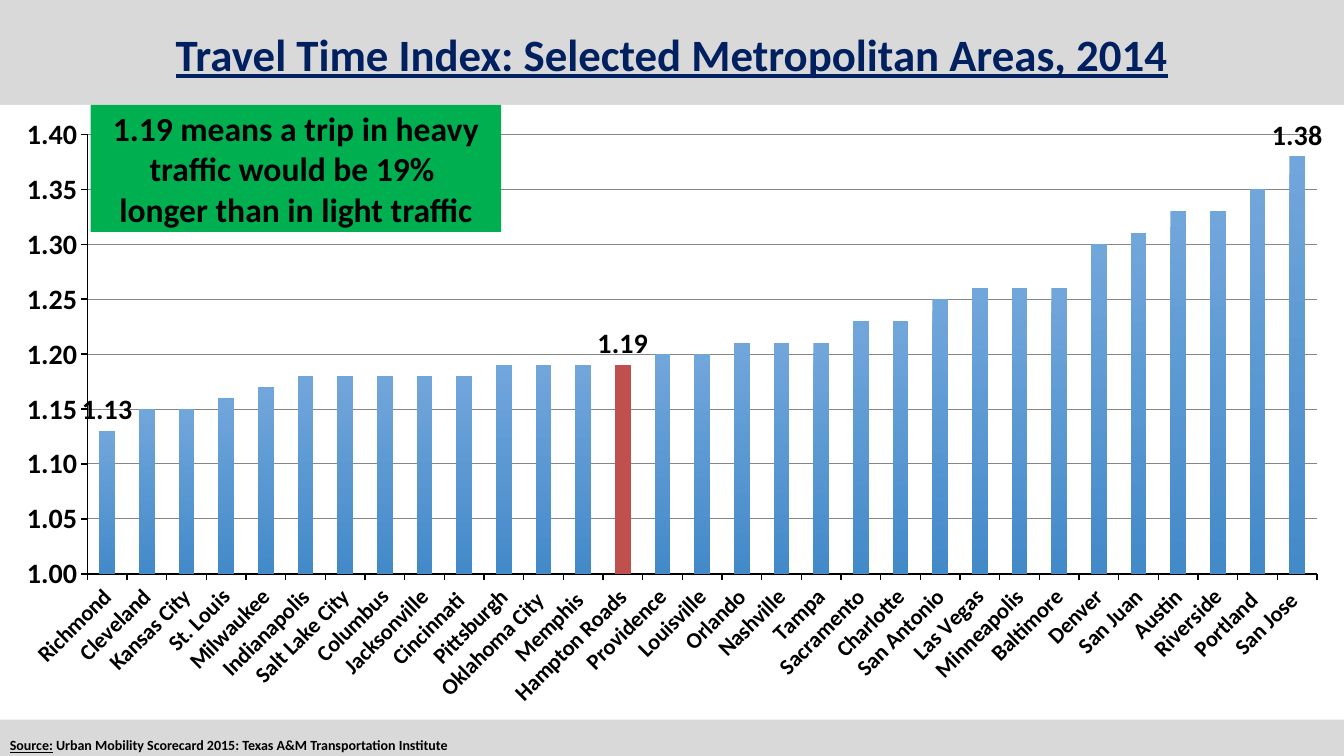
"""Build a slide with a column chart of travel time indexes by metropolitan area."""
from lxml import etree
from pptx import Presentation
from pptx.chart.data import CategoryChartData
from pptx.dml.color import RGBColor
from pptx.enum.chart import XL_CHART_TYPE, XL_LABEL_POSITION, XL_TICK_MARK
from pptx.enum.shapes import MSO_SHAPE
from pptx.enum.text import MSO_ANCHOR, PP_ALIGN
from pptx.oxml import parse_xml
from pptx.oxml.ns import nsdecls, qn
from pptx.util import Inches, Pt

COLUMNS = XL_CHART_TYPE.COLUMN_CLUSTERED
OUTSIDE_END = XL_LABEL_POSITION.OUTSIDE_END
TICK_OUT = XL_TICK_MARK.OUTSIDE
TICK_NONE = XL_TICK_MARK.NONE
RECTANGLE = MSO_SHAPE.RECTANGLE
MIDDLE = MSO_ANCHOR.MIDDLE
CENTER = PP_ALIGN.CENTER

BLACK = RGBColor(0, 0, 0)
NAVY = RGBColor(0x00, 0x20, 0x60)
GREEN = RGBColor(0x00, 0xB0, 0x50)
RED = RGBColor(0xC0, 0x50, 0x4D)
BAR_TOP = RGBColor(0x71, 0xA6, 0xDB)
BAR_BOTTOM = RGBColor(0x43, 0x8A, 0xC9)
GRID_GRAY = RGBColor(0x86, 0x86, 0x86)
PAGE_GRAY = RGBColor(0xD9, 0xD9, 0xD9)

FONT = "Calibri"
HIGHLIGHT = "Hampton Roads"
INDEXES = {
    "Richmond": 1.13, "Cleveland": 1.15, "Kansas City": 1.15, "St. Louis": 1.16,
    "Milwaukee": 1.17, "Indianapolis": 1.18, "Salt Lake City": 1.18,
    "Columbus": 1.18, "Jacksonville": 1.18, "Cincinnati ": 1.18,
    "Pittsburgh": 1.19, "Oklahoma City ": 1.19, "Memphis ": 1.19,
    "Hampton Roads": 1.19, "Providence": 1.2, "Louisville": 1.2,
    "Orlando": 1.21, "Nashville": 1.21, "Tampa": 1.21, "Sacramento": 1.23,
    "Charlotte": 1.23, "San Antonio": 1.25, "Las Vegas": 1.26,
    "Minneapolis": 1.26, "Baltimore": 1.26, "Denver": 1.3, "San Juan": 1.31,
    "Austin": 1.33, "Riverside": 1.33, "Portland ": 1.35, "San Jose ": 1.38,
}
CALLOUT_LINES = (
    "1.19 means a trip in heavy",
    "traffic would be 19% ",
    "longer than in light traffic",
)


def style_font(font, size, color=BLACK):
    """Apply the slide's bold typeface."""
    font.name = FONT
    font.size = Pt(size)
    font.bold = True
    font.color.rgb = color


deck = Presentation()
deck.slide_width = Inches(13.33)
deck.slide_height = Inches(7.5)
page = deck.slides.add_slide(deck.slide_layouts[6])
page.background.fill.solid()
page.background.fill.fore_color.rgb = PAGE_GRAY

cities = list(INDEXES)
chart_data = CategoryChartData(number_format="0.00")
chart_data.categories = cities
chart_data.add_series("Series 1", list(INDEXES.values()))
chart = page.shapes.add_chart(
    COLUMNS, 0, Inches(1.04), deck.slide_width, Inches(6.1), chart_data
).chart
chart.has_legend = False
chart.has_title = False
chart.font.name = FONT
chart.font.size = Pt(10)
chart.font.color.rgb = BLACK

chart_space = chart.element
chart_space.find(qn("c:chart")).addnext(parse_xml(
    f'<c:spPr {nsdecls("c", "a")}><a:solidFill><a:srgbClr val="FFFFFF"/></a:solidFill>'
    '<a:ln><a:noFill/></a:ln></c:spPr>'
))
plot_area = chart_space.find(".//" + qn("c:plotArea"))
for old_layout in plot_area.findall(qn("c:layout")):
    plot_area.remove(old_layout)
layout = etree.Element(qn("c:layout"))
manual = etree.SubElement(layout, qn("c:manualLayout"))
for tag, value in (
    ("layoutTarget", "inner"), ("xMode", "edge"), ("yMode", "edge"),
    ("x", "0.065"), ("y", "0.048"), ("w", "0.915"), ("h", "0.715"),
):
    etree.SubElement(manual, qn("c:" + tag)).set("val", value)
plot_area.insert(0, layout)

city_axis, index_axis = chart.category_axis, chart.value_axis
for axis, size in ((city_axis, 16), (index_axis, 20)):
    style_font(axis.tick_labels.font, size)
    axis.major_tick_mark = TICK_OUT
    axis.minor_tick_mark = TICK_NONE
    axis.format.line.color.rgb = BLACK
    axis.format.line.width = Pt(1)
city_axis._element.find(".//" + qn("a:bodyPr")).set("rot", "-2700000")
index_axis.minimum_scale = 1
index_axis.maximum_scale = 1.4
index_axis.major_unit = 0.05
index_axis.tick_labels.number_format = "0.00"
index_axis.tick_labels.number_format_is_linked = False
index_axis.has_major_gridlines = True
index_axis.major_gridlines.format.line.color.rgb = GRID_GRAY
index_axis.major_gridlines.format.line.width = Pt(0.75)

plot = chart.plots[0]
plot.gap_width = 150
plot.vary_by_categories = False
bars = plot.series[0]
bars.invert_if_negative = False
bar_fill = bars.format.fill
bar_fill.gradient()
bar_fill.gradient_angle = 270
for stop, color in zip(bar_fill.gradient_stops, (BAR_TOP, BAR_BOTTOM)):
    stop.color.rgb = color

highlight_index = cities.index(HIGHLIGHT)
highlight_fill = bars.points[highlight_index].format.fill
highlight_fill.solid()
highlight_fill.fore_color.rgb = RED
bars.data_labels.show_value = False
for index in (0, highlight_index, len(cities) - 1):
    label = bars.points[index].data_label
    style_font(label.font, 20)
    label.position = OUTSIDE_END

title_box = page.shapes.add_textbox(0, 0, deck.slide_width, Inches(1.13))
title_frame = title_box.text_frame
title_frame.word_wrap = True
title_frame.vertical_anchor = MIDDLE
title = title_frame.paragraphs[0]
title.text = "Travel Time Index: Selected Metropolitan Areas, 2014"
title.alignment = CENTER
title.line_spacing = 0.9
style_font(title.font, 32, NAVY)
title.font.underline = True

source_box = page.shapes.add_textbox(0, Inches(7.26), Inches(9.27), Inches(0.27))
source_box.text_frame.word_wrap = True
source = source_box.text_frame.paragraphs[0]
for text, underlined in (
    ("Source:", True),
    (" Urban Mobility Scorecard 2015: Texas A&M Transportation Institute", False),
):
    span = source.add_run()
    span.text = text
    style_font(span.font, 10)
    span.font.underline = underlined

callout = page.shapes.add_shape(
    RECTANGLE, Inches(0.9), Inches(1.04), Inches(4.07), Inches(1.26)
)
callout.shadow.inherit = False
callout.fill.solid()
callout.fill.fore_color.rgb = GREEN
callout.line.fill.background()
callout_frame = callout.text_frame
callout_frame.word_wrap = False
callout_frame.vertical_anchor = MIDDLE
callout_frame.text = "\n".join(CALLOUT_LINES)
for para in callout_frame.paragraphs:
    para.alignment = CENTER
    style_font(para.font, 24)

deck.save("out.pptx")
